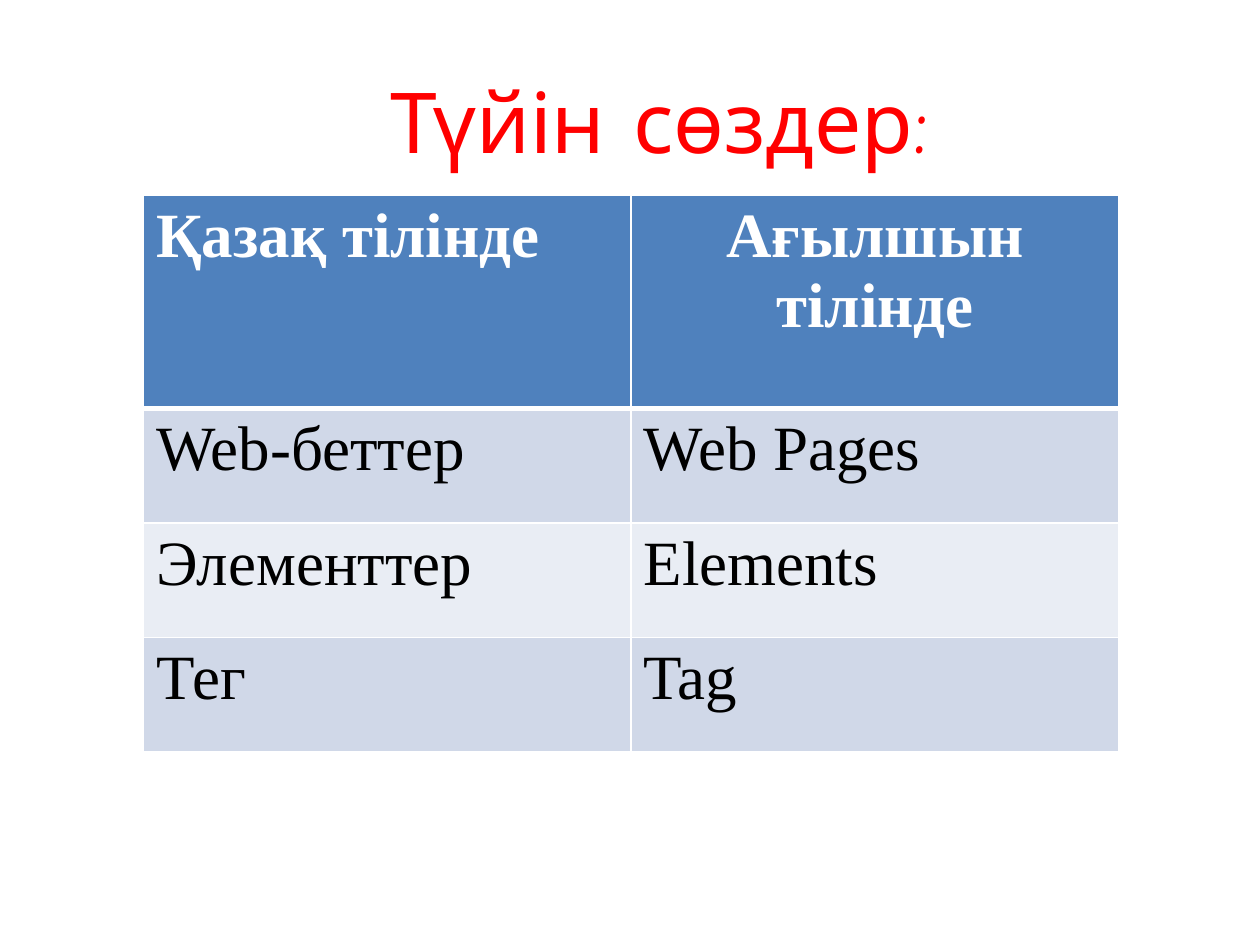
from lxml.etree import SubElement
from pptx import Presentation
from pptx.dml.color import RGBColor
from pptx.enum.text import MSO_ANCHOR, PP_ALIGN
from pptx.oxml.ns import qn
from pptx.util import Inches, Pt


def color(code):
    return RGBColor.from_string(code)


class Deck:
    white, black, red = "FFFFFF", "000000", "FF0000"
    head = "4F81BD"
    bands = ("D0D8E8", "E9EDF4")
    title_font, body_font = "Comic Neue", "Times New Roman"

    def __init__(self, width, height):
        self.file = Presentation()
        self.file.slide_width = Inches(width)
        self.file.slide_height = Inches(height)
        self.slide = self.file.slides.add_slide(self.file.slide_layouts[6])

    def label(self, frame, text, face, size, shade, bold=False, align=PP_ALIGN.LEFT):
        para = frame.paragraphs[0]
        para.text = text
        para.alignment = align
        font = para.font
        font.name, font.size, font.bold = face, Pt(size), bold
        font.color.rgb = color(shade)

    def title(self, text, left, top, width, height):
        box = self.slide.shapes.add_textbox(
            Inches(left), Inches(top), Inches(width), Inches(height))
        frame = box.text_frame
        frame.word_wrap = True
        frame.vertical_anchor = MSO_ANCHOR.MIDDLE
        self.label(frame, text, self.title_font, 48, self.red, align=PP_ALIGN.CENTER)

    def border(self, cell, side, width):
        line = SubElement(cell._tc.get_or_add_tcPr(), qn("a:ln" + side), w=str(Pt(width)))
        fill = SubElement(line, qn("a:solidFill"))
        SubElement(fill, qn("a:srgbClr"), val=self.white)

    def table(self, rows, left, top, width, heights):
        grid = self.slide.shapes.add_table(
            len(rows), len(rows[0]), Inches(left), Inches(top),
            Inches(width), Inches(sum(heights))).table
        for r, words in enumerate(rows):
            grid.rows[r].height = Inches(heights[r])
            first = r == 0
            for c, word in enumerate(words):
                cell = grid.cell(r, c)
                # The rule under the header is thicker
                for side in "LRTB":
                    thick = (side == "B" and r == 0) or (side == "T" and r == 1)
                    self.border(cell, side, 3 if thick else 1)
                cell.fill.solid()
                cell.fill.fore_color.rgb = color(
                    self.head if first else self.bands[(r - 1) % 2])
                self.label(cell.text_frame, word, self.body_font, 36,
                           self.white if first else self.black, first,
                           PP_ALIGN.CENTER if first and c else PP_ALIGN.LEFT)


def main():
    deck = Deck(10, 7.5)

    # Title
    deck.title("Түйін сөздер:", 1.85, 0.36, 6.77, 1.18)

    # Key words in both languages
    terms = [
        ("Қазақ тілінде", "Ағылшын тілінде"),
        ("Web-беттер", "Web Pages"),
        ("Элементтер", "Elements"),
        ("Тег", "Tag"),
    ]
    deck.table(terms, 1.14, 1.55, 7.74, [1.69] + [0.91] * 3)

    deck.file.save("out.pptx")


if __name__ == "__main__":
    main()
